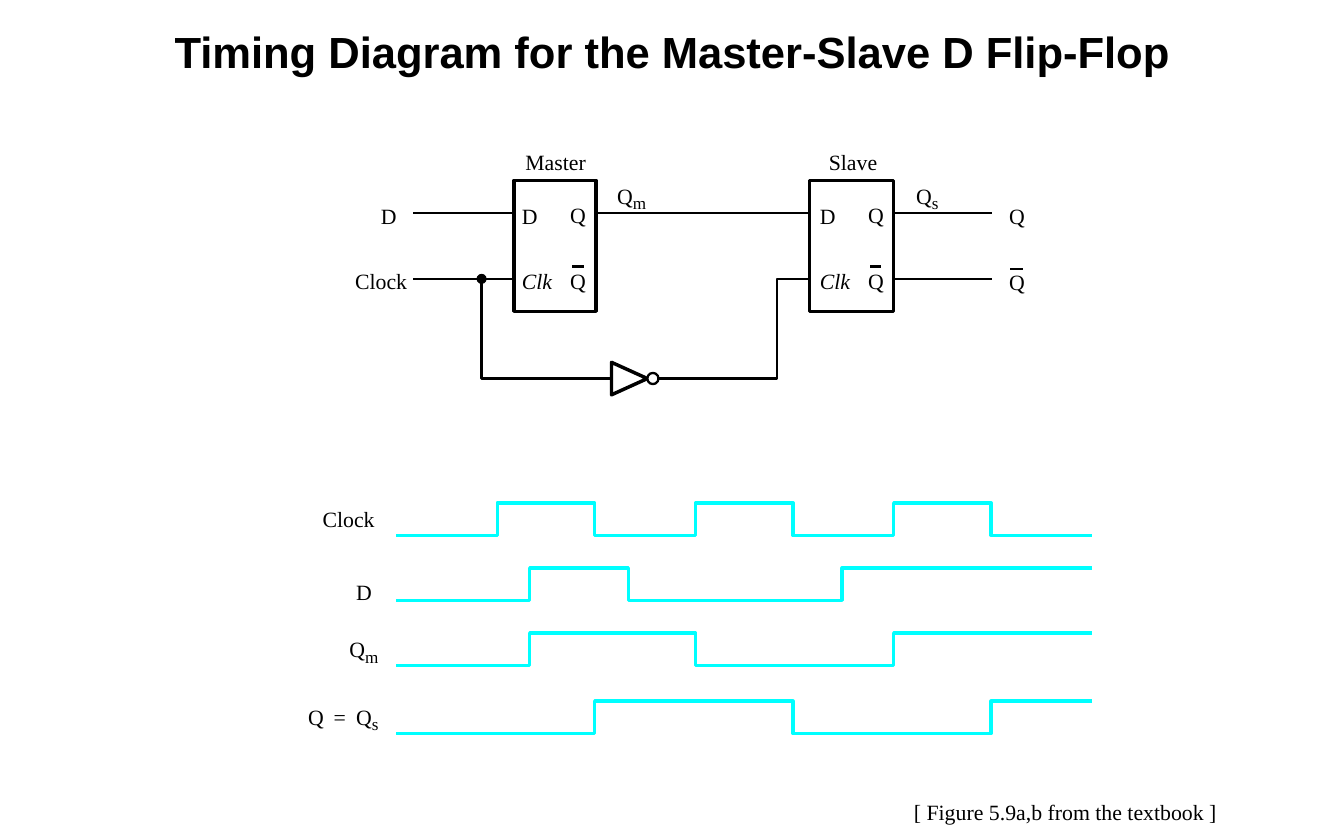
from dataclasses import dataclass

from lxml import etree
from pptx import Presentation
from pptx.dml.color import RGBColor
from pptx.enum.shapes import MSO_CONNECTOR, MSO_SHAPE
from pptx.enum.text import MSO_ANCHOR, MSO_AUTO_SIZE, PP_ALIGN
from pptx.oxml.ns import qn
from pptx.util import Inches, Pt

STRAIGHT = MSO_CONNECTOR.STRAIGHT
RECT, OVAL = MSO_SHAPE.RECTANGLE, MSO_SHAPE.OVAL
TOP, CENTER = MSO_ANCHOR.TOP, PP_ALIGN.CENTER
GROW, FIXED = MSO_AUTO_SIZE.SHAPE_TO_FIT_TEXT, MSO_AUTO_SIZE.NONE


@dataclass(frozen=True)
class Theme:
    ink: RGBColor = RGBColor(0, 0, 0)
    paper: RGBColor = RGBColor(255, 255, 255)
    wave: RGBColor = RGBColor(0, 255, 255)
    head: str = "Arial"
    body: str = "Times New Roman"
    title: float = 28
    text: float = 14
    sub: float = 11
    bold: float = 2.25
    wire: float = 1.5
    bar: float = 1.38
    thin: float = 0.75


THEME = Theme()
WIDTHS = {"Clock": 0.52, "Clk": 0.33, "Master": 0.55, "Slave": 0.49,
          "m": 0.16, "s": 0.1, "=": 0.16}


def style(run, face, size, bold=False, italic=False):
    font = run.font
    font.name, font.size = face, Pt(size)
    font.bold, font.italic = bold, italic
    font.color.rgb = THEME.ink


def label(shapes, x, y, text, size=THEME.text, italic=False, wide=None):
    wide = wide or WIDTHS.get(text, 0.19)
    high = 0.24 if size == THEME.text else 0.19
    box = shapes.add_textbox(Inches(x), Inches(y), Inches(wide), Inches(high))
    frame = box.text_frame
    frame.margin_left = frame.margin_right = 0
    frame.margin_top = frame.margin_bottom = 0
    frame.word_wrap, frame.auto_size = False, GROW
    frame.text = text
    style(frame.paragraphs[0].runs[0], THEME.body, size, italic=italic)


def signal(shapes, x, y, sub):
    """Letter Q with a subscript."""
    label(shapes, x, y, "Q")
    label(shapes, x + 0.14, y + 0.09, sub, THEME.sub)


def line(shapes, x, y, end, width=THEME.wire):
    """Level line from x to end."""
    item = shapes.add_connector(STRAIGHT, Inches(x), Inches(y),
                                Inches(end), Inches(y))
    item.line.color.rgb, item.line.width = THEME.ink, Pt(width)
    etree.SubElement(item.element.spPr, qn("a:effectLst"))


def paint(shape, fill, color, width):
    shape.shadow.inherit = False
    if fill is None:
        shape.fill.background()
    else:
        shape.fill.solid()
        shape.fill.fore_color.rgb = fill
    shape.line.color.rgb, shape.line.width = color, Pt(width)


def solid(shapes, kind, x, y, w, h, fill, width):
    shape = shapes.add_shape(kind, Inches(x), Inches(y), Inches(w), Inches(h))
    paint(shape, fill, THEME.ink, width)


def trace(shapes, points, color, width, fill=None):
    """Outline through the points, closed when it has a fill."""
    first, *rest = [(Inches(x), Inches(y)) for x, y in points]
    pen = shapes.build_freeform(*first)
    pen.add_line_segments(rest, close=fill is not None)
    paint(pen.convert_to_shape(), fill, color, width)


def latch(shapes, box, name, shift, pad):
    x, y, w, h = box
    solid(shapes, RECT, x, y, w, h, THEME.paper, THEME.bold)
    label(shapes, x + shift, y - 0.28, name)
    label(shapes, x + pad, y + 0.2, "D")
    label(shapes, x + pad, y + 0.78, "Clk", italic=True)
    for drop in (0.19, 0.78):
        label(shapes, x + w - 0.23, y + drop, "Q")
    line(shapes, x + w - 0.21, y + 0.77, x + w - 0.11, THEME.bar)


def gate(shapes, x, y):
    """Inverter whose input is at x, y."""
    line(shapes, x - 0.29, y, x)
    line(shapes, x + 0.38, y, x + 0.61)
    trace(shapes, [(x + 0.32, y), (x, y + 0.145), (x, y - 0.145)],
          THEME.ink, THEME.bold, THEME.paper)
    solid(shapes, OVAL, x + 0.32, y - 0.05, 0.1, 0.1, THEME.paper, THEME.wire)


def circuit(shapes, box):
    x, y, w, h = box
    left, right = x + 0.9, x + 3.54
    high, low, base = y + 0.29, y + 0.88, y + 1.77
    node, turn, end = x + 0.61, x + 3.25, x + w
    for start, level, stop in ((x, high, left), (left + 0.73, high, right),
                               (right + 0.75, high, end),
                               (right + 0.75, low, end)):
        line(shapes, start, level, stop)
    trace(shapes, [(x, low), (node, low), (node, base), (x + 1.48, base)],
          THEME.ink, THEME.wire)
    trace(shapes, [(right, low), (turn, low), (turn, base), (x + 2.38, base)],
          THEME.ink, THEME.wire)
    line(shapes, node, low, left, THEME.bar)
    solid(shapes, OVAL, node - 0.04, low - 0.04, 0.08, 0.08,
          THEME.ink, THEME.thin)
    gate(shapes, x + 1.77, base)
    latch(shapes, (left, y, 0.73, 1.17), "Master", 0.1, 0.07)
    latch(shapes, (right, y, 0.75, 1.17), "Slave", 0.17, 0.09)
    label(shapes, x - 0.29, y + 0.2, "D")
    label(shapes, x - 0.52, y + 0.78, "Clock")
    label(shapes, end + 0.15, y + 0.2, "Q")
    label(shapes, end + 0.15, y + 0.79, "Q")
    line(shapes, end + 0.16, y + 0.79, end + 0.27, THEME.bar)
    signal(shapes, x + 1.82, y + 0.02, "m")
    signal(shapes, x + 4.49, y + 0.02, "s")


def wave(shapes, box, edges):
    """Signal that starts low and toggles at each edge."""
    x, y, w, h = box
    levels = (y + h, y)
    points = [(x, levels[0])]
    for i, edge in enumerate(edges):
        points += [(x + edge, levels[i % 2]), (x + edge, levels[1 - i % 2])]
    points.append((x + w, levels[len(edges) % 2]))
    trace(shapes, points, THEME.wave, THEME.bold)


def timing(shapes, box):
    x, y, w, h = box
    period = 1.77
    rise = [0.9 + period * i for i in range(3)]
    fall = [period * (i + 1) for i in range(3)]
    data = [1.19, 2.07, 3.98]
    rows = ((0, sorted(rise + fall)), (0.58, data),
            (1.16, [data[0], rise[1], rise[2]]), (1.77, fall))
    for drop, edges in rows:
        wave(shapes, (x, y + drop, w, 0.29), edges)
    label(shapes, x - 0.66, y + 0.03, "Clock")
    label(shapes, x - 0.36, y + 0.68, "D")
    signal(shapes, x - 0.42, y + 1.19, "m")
    label(shapes, x - 0.79, y + 1.79, "Q")
    label(shapes, x - 0.56, y + 1.79, "=")
    signal(shapes, x - 0.36, y + 1.79, "s")


def heading(shape, box):
    shape.left, shape.top, shape.width, shape.height = map(Inches, box)
    frame = shape.text_frame
    frame.text = "Timing Diagram for the Master-Slave D Flip-Flop"
    frame.word_wrap, frame.auto_size = True, FIXED
    frame.vertical_anchor = TOP
    para = frame.paragraphs[0]
    para.alignment = CENTER
    style(para.runs[0], THEME.head, THEME.title, bold=True)


def main():
    deck = Presentation()
    deck.slide_width, deck.slide_height = Inches(12), Inches(7.5)
    slide = deck.slides.add_slide(deck.slide_layouts[5])
    heading(slide.shapes.title, (1, 0.17, 10, 0.67))
    circuit(slide.shapes.add_group_shape().shapes, (3.69, 1.61, 5.17, 1.91))
    timing(slide.shapes, (3.54, 4.49, 6.21, 2.06))
    label(slide.shapes, 8.16, 7.13, "[ Figure 5.9a,b from the textbook ]",
          wide=2.73)
    deck.save("out.pptx")


if __name__ == "__main__":
    main()
